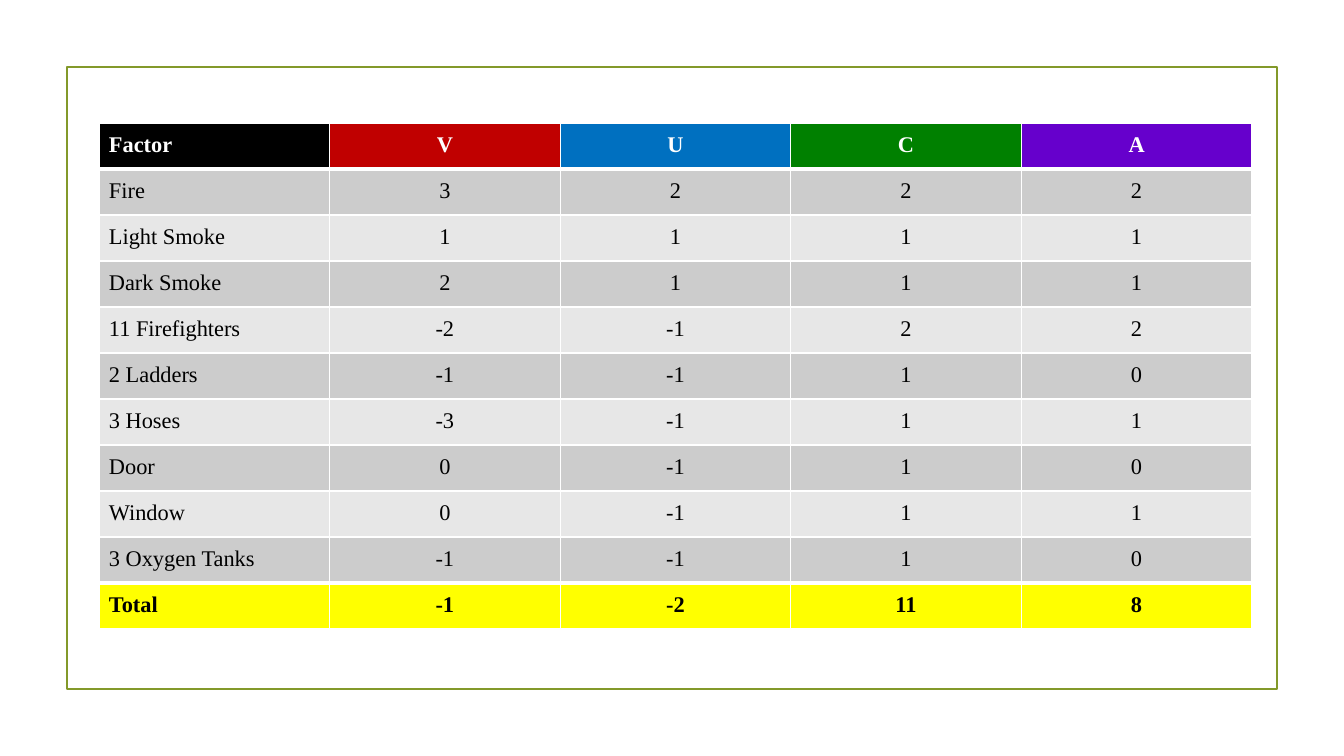
import pptx
import pptx.util
import pptx.dml.color
import pptx.enum.shapes
import pptx.enum.text
import pptx.oxml
import pptx.oxml.ns

HEADS = [("Factor", "000000"), ("V", "C00000"), ("U", "0070C0"),
         ("C", "008000"), ("A", "6600CC")]
SCORES = [
    ("Fire", 3, 2, 2, 2),
    ("Light Smoke", 1, 1, 1, 1),
    ("Dark Smoke", 2, 1, 1, 1),
    ("11 Firefighters", -2, -1, 2, 2),
    ("2 Ladders", -1, -1, 1, 0),
    ("3 Hoses", -3, -1, 1, 1),
    ("Door", 0, -1, 1, 0),
    ("Window", 0, -1, 1, 1),
    ("3 Oxygen Tanks", -1, -1, 1, 0),
]
TOTAL = ("Total", -1, -2, 11, 8)
BANDS = ("CCCCCC", "E7E7E7")

SLIDE = (1344, 756)
FRAME = (67, 67, 1210, 622)
LEFT, TOP, WIDTH, ROW = 99, 123, 1153, 46
INSET = 10
THIN, THICK = 1, 3


def px(n):
    return pptx.util.Emu(round(n * 914400 / 100.8))


def color(code):
    return pptx.dml.color.RGBColor.from_string(code)


def edge(cell, side, width):
    """Draw one white border; call before the cell's fill is set."""
    props = cell._tc.get_or_add_tcPr()
    props.append(pptx.oxml.parse_xml(
        f'<a:ln{side} {pptx.oxml.ns.nsdecls("a")} w="{pptx.util.Pt(width)}">'
        '<a:solidFill><a:srgbClr val="FFFFFF"/></a:solidFill>'
        f'</a:ln{side}>'))


def write(cell, text, ink="000000", bold=False, center=False):
    cell.margin_left = cell.margin_right = px(INSET)
    cell.margin_top = cell.margin_bottom = px(INSET)
    align = pptx.enum.text.PP_ALIGN
    para = cell.text_frame.paragraphs[0]
    para.alignment = align.CENTER if center else align.LEFT
    run = para.add_run()
    run.text = str(text)
    run.font.name = "Times New Roman"
    run.font.size = pptx.util.Pt(16)
    run.font.bold = bold
    run.font.color.rgb = color(ink)


def add_frame(slide):
    frame = slide.shapes.add_shape(
        pptx.enum.shapes.MSO_SHAPE.RECTANGLE, *map(px, FRAME))
    frame.shadow.inherit = False
    frame.fill.background()
    frame.line.color.rgb = color("83992A")
    frame.line.width = pptx.util.Pt(1.25)


def add_scores(slide):
    rows = [[name for name, _ in HEADS], *SCORES, TOTAL]
    last = len(rows) - 1
    table = slide.shapes.add_table(
        len(rows), len(HEADS), px(LEFT), px(TOP),
        px(WIDTH), px(ROW * len(rows))).table
    for col in table.columns:
        col.width = px(WIDTH / len(HEADS))
    for r, row in enumerate(rows):
        table.rows[r].height = px(ROW)
        for c, text in enumerate(row):
            cell = table.cell(r, c)
            write(cell, text, ink="000000" if r else "FFFFFF",
                  bold=r in (0, last), center=c > 0)
            edge(cell, "L", THIN)
            edge(cell, "R", THIN)
            edge(cell, "T", THICK if r in (1, last) else THIN)
            edge(cell, "B", THICK if r in (0, last - 1) else THIN)
            if r == 0:
                shade = HEADS[c][1]
            elif r == last:
                shade = "FFFF00"
            else:
                shade = BANDS[(r - 1) % 2]
            cell.fill.solid()
            cell.fill.fore_color.rgb = color(shade)


def main():
    deck = pptx.Presentation()
    deck.slide_width, deck.slide_height = map(px, SLIDE)
    slide = deck.slides.add_slide(deck.slide_layouts[6])
    add_frame(slide)
    add_scores(slide)
    deck.save("out.pptx")


if __name__ == "__main__":
    main()
